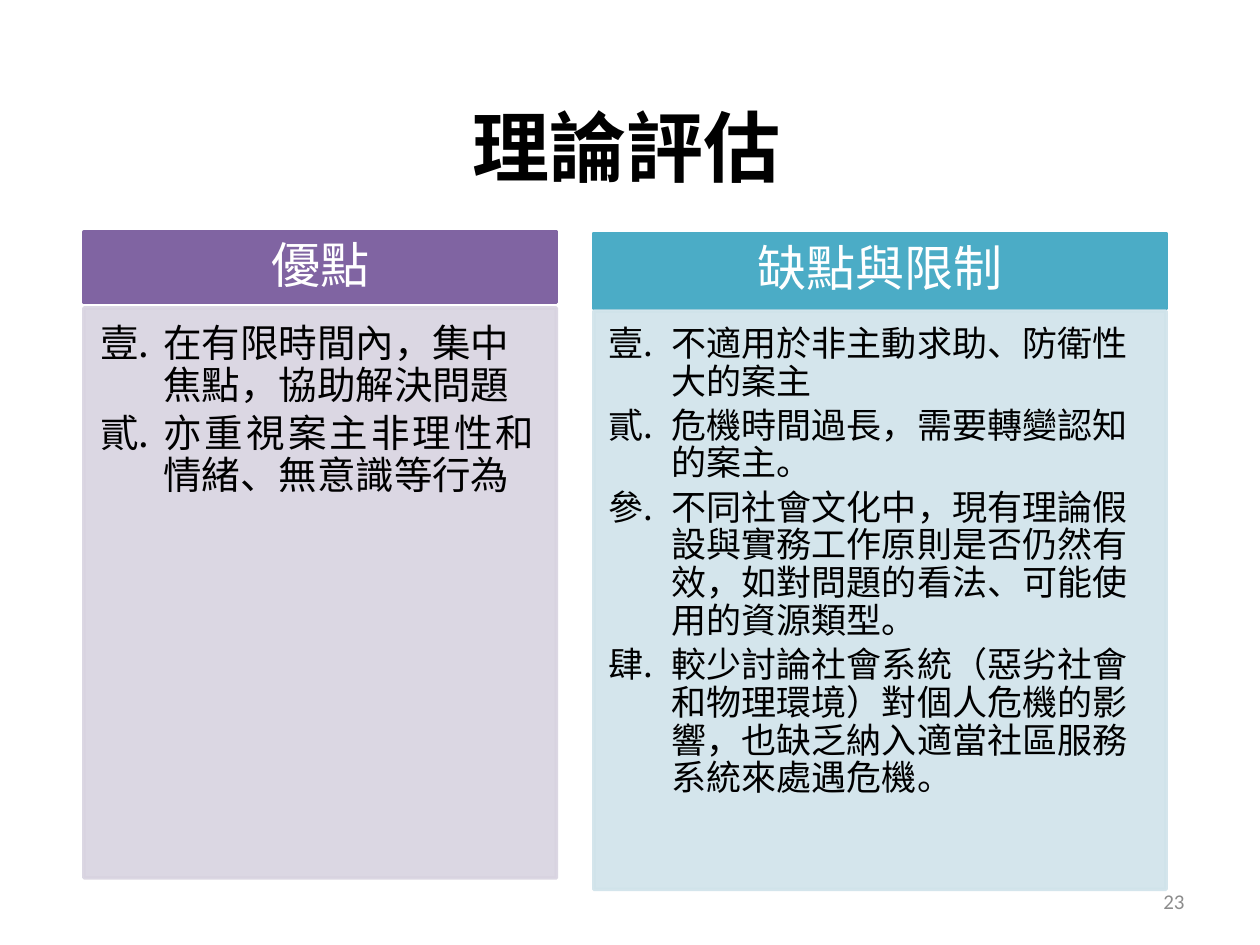
from pptx import Presentation
from pptx import util as u
from pptx.dml.color import RGBColor
from pptx.enum import text
from pptx.oxml import ns
from lxml import etree

Pt = u.Pt
FONT = "Noto Sans CJK SC"
BLACK = RGBColor(0x00, 0x00, 0x00)
WHITE = RGBColor(0xFF, 0xFF, 0xFF)
GRAY = RGBColor(0x8C, 0x8C, 0x8C)
PURPLE = RGBColor(0x80, 0x64, 0xA2)
LILAC = RGBColor(0xD8, 0xD3, 0xE0)
TEAL = RGBColor(0x4B, 0xAC, 0xC6)
PALE_TEAL = RGBColor(0xD0, 0xE3, 0xEA)
ALIGN = text.PP_ALIGN
ANCHOR = text.MSO_ANCHOR


def assign(target, values):
    for name, value in values.items():
        setattr(target, name, value)


class SlideBuilder:
    def __init__(self, page, font):
        self.page = page
        self.font = font

    def place(self, box, bounds, anchor, insets):
        names = ("left", "top", "width", "height")
        assign(box, {name: Pt(value) for name, value in zip(names, bounds)})
        sides = ("margin_left", "margin_top", "margin_right", "margin_bottom")
        frame = box.text_frame
        assign(frame, {side: Pt(value) for side, value in zip(sides, insets)})
        assign(frame, {"word_wrap": True, "vertical_anchor": anchor,
                       "auto_size": text.MSO_AUTO_SIZE.NONE})

    def add_words(self, para, words, size, color, font=None, bold=False, **layout):
        assign(para, {"space_before": Pt(0), **layout})
        span = para.add_run()
        span.text = words
        name = font or self.font
        assign(span.font, {"name": name, "size": Pt(size), "bold": bold})
        span.font.color.rgb = color
        properties = span._r.get_or_add_rPr()
        etree.SubElement(properties, ns.qn("a:ea"), typeface=name)

    def paint(self, box, color, opacity=100):
        box.line.width = Pt(2)
        for paint_fill in (box.fill, box.line.fill):
            paint_fill.solid()
            paint_fill.fore_color.rgb = color
        if opacity < 100:
            for tint in box._element.spPr.iter(ns.qn("a:srgbClr")):
                etree.SubElement(tint, ns.qn("a:alpha"), val=str(opacity * 1000))

    def title(self, words, bounds):
        box = self.page.shapes.title
        self.place(box, bounds, ANCHOR.MIDDLE, (7.2, 3.6, 7.2, 3.6))
        self.add_words(box.text_frame.paragraphs[0], words, 44, BLACK,
                       bold=True, alignment=ALIGN.CENTER)

    def heading(self, slot, words, bounds, color):
        box = self.page.placeholders[slot]
        self.place(box, bounds, ANCHOR.MIDDLE, (16, 8.5, 16, 8.5))
        self.paint(box, color)
        self.add_words(box.text_frame.paragraphs[0], words, 28, WHITE,
                       alignment=ALIGN.CENTER, line_spacing=0.9)

    def numbered_list(self, slot, items, bounds, color, size, insets):
        box = self.page.placeholders[slot]
        self.place(box, bounds, ANCHOR.TOP, insets)
        self.paint(box, color, opacity=90)
        frame = box.text_frame
        for index, (words, alignment) in enumerate(items):
            para = frame.add_paragraph() if index else frame.paragraphs[0]
            properties = para._p.get_or_add_pPr()
            properties.set("marL", str(Pt(36)))
            properties.set("indent", str(-Pt(36)))
            etree.SubElement(properties, ns.qn("a:buFont"), typeface="+mj-lt")
            etree.SubElement(properties, ns.qn("a:buAutoNum"), type="ea1ChtPeriod")
            self.add_words(para, words, size, BLACK, alignment=alignment,
                           line_spacing=0.9, space_after=Pt(size * 0.18))

    def page_number(self, words, bounds):
        box = self.page.shapes.add_textbox(0, 0, 0, 0)
        self.place(box, bounds, ANCHOR.MIDDLE, (7.2, 3.6, 7.2, 3.6))
        self.add_words(box.text_frame.paragraphs[0], words, 12, GRAY,
                       font="Calibri", alignment=ALIGN.RIGHT)


def main():
    deck = Presentation()
    deck.slide_width, deck.slide_height = Pt(720), Pt(540)
    # The comparison layout holds a title and two heading/list pairs
    builder = SlideBuilder(deck.slides.add_slide(deck.slide_layouts[4]), FONT)

    builder.title("理論評估", (34, 38, 648, 90))

    # Strengths
    builder.heading(1, "優點", (48, 132.5, 270, 40.3), PURPLE)
    builder.numbered_list(2, [
        ("在有限時間內，集中焦點，協助解決問題", ALIGN.LEFT),
        ("亦重視案主非理性和情緒、無意識等行為", ALIGN.JUSTIFY),
    ], (48, 176, 270, 325.7), LILAC, 22, (9.4, 9.4, 12.5, 14))

    # Weaknesses and limits
    builder.heading(3, "缺點與限制", (339.3, 133.3, 327, 43), TEAL)
    builder.numbered_list(4, [(words, ALIGN.LEFT) for words in (
        "不適用於非主動求助、防衛性大的案主",
        "危機時間過長，需要轉變認知的案主。",
        "不同社會文化中，現有理論假設與實務工作原則是否仍然有效，"
        "如對問題的看法、可能使用的資源類型。",
        "較少討論社會系統（惡劣社會和物理環境）對個人危機的影響，"
        "也缺乏納入適當社區服務系統來處遇危機。",
    )], (339.3, 177.8, 327, 330.5), PALE_TEAL, 20, (8.5, 8.5, 11.4, 12.5))

    builder.page_number("23", (516, 500.5, 168, 28.8))
    deck.save("out.pptx")


if __name__ == "__main__":
    main()
